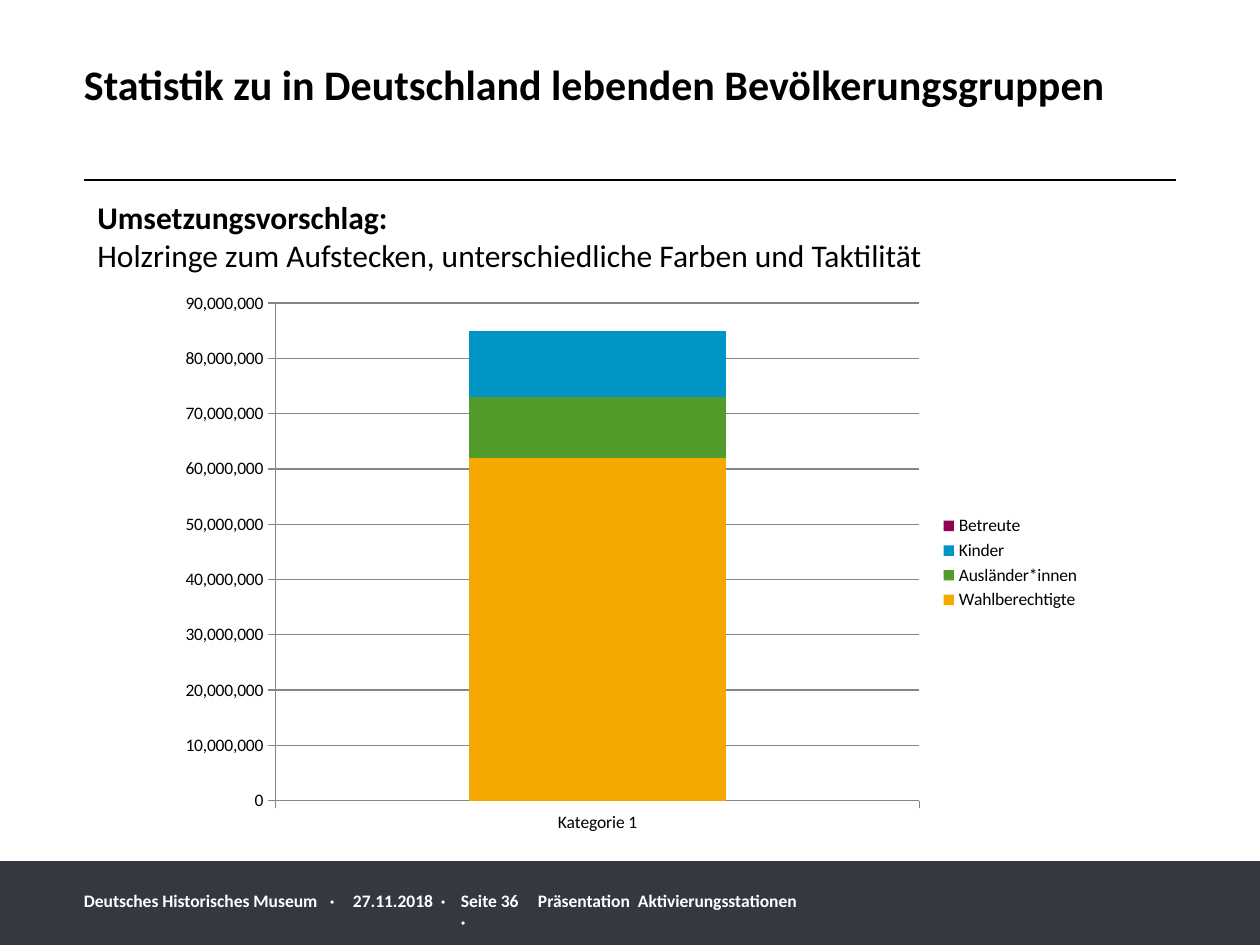
from dataclasses import dataclass

from lxml import etree
from pptx import Presentation
from pptx import util as u
from pptx.chart.data import CategoryChartData
from pptx.dml.color import RGBColor
from pptx.enum import chart as ch
from pptx.enum import shapes, text
from pptx.oxml.ns import qn


@dataclass(frozen=True)
class Theme:
    font: str = "Calibri"
    ink: str = "000000"
    paper: str = "FFFFFF"
    band: str = "343840"
    grid: str = "868686"
    title_size: int = 24
    body_size: int = 18
    small_size: int = 10


THEME = Theme()
PX_PER_INCH = 126
LEFT, RIGHT = 84, 1176
FOOTER_TOP, FOOTER_TEXT_TOP = 861, 890

# left, width, text, tab stop within the box
FOOTER = [
    (LEFT, 263, "Deutsches Historisches Museum\t·", 246),
    (353, 100, "27.11.2018\t·", 88),
    (461, 72, "Seite 36\v·", None),
    (538, 399, "Präsentation\tAktivierungsstationen", 100),
]
CATEGORIES = ["Kategorie 1"]
GROUPS = [
    ("Wahlberechtigte", 62_000_000, "F4A800"),
    ("Ausländer*innen", 11_000_000, "539B2A"),
    ("Kinder", 12_000_000, "0095C4"),
    ("Betreute", 0, "8F0256"),
]


def px(length):
    return u.Emu(round(length * 914400 / PX_PER_INCH))


def rgb(code):
    return RGBColor.from_string(code)


def style_font(font, size, color=THEME.ink, bold=False):
    font.name = THEME.font
    font.size = u.Pt(size)
    font.bold = bold
    font.color.rgb = rgb(color)


def add_tab_stop(para, position):
    stops = etree.SubElement(para._p.get_or_add_pPr(), qn("a:tabLst"))
    etree.SubElement(stops, qn("a:tab"), pos=str(px(position)), algn="l")


def add_text(page, area, lines, size, color=THEME.ink, inset=True, tab=None):
    """Add a text box; lines holds (wording, bold) pairs, one per paragraph."""
    box = page.shapes.add_textbox(*map(px, area))
    frame = box.text_frame
    frame.word_wrap = True
    frame.vertical_anchor = text.MSO_ANCHOR.TOP
    if not inset:
        frame.margin_left = frame.margin_right = 0
        frame.margin_top = frame.margin_bottom = 0
    frame.text = "\n".join(wording for wording, _ in lines)
    for para, (_, bold) in zip(frame.paragraphs, lines):
        if tab:
            add_tab_stop(para, tab)
        for span in para.runs:
            style_font(span.font, size, color, bold)
    return box


def add_rule(page, y):
    rule = page.shapes.add_connector(
        shapes.MSO_CONNECTOR.STRAIGHT, px(LEFT), px(y), px(RIGHT), px(y))
    rule.line.color.rgb = rgb(THEME.ink)
    rule.line.width = u.Pt(0.75)
    etree.SubElement(rule._element.spPr, qn("a:effectLst"))


def add_footer(page):
    band = page.shapes.add_shape(
        shapes.MSO_SHAPE.RECTANGLE, 0, px(FOOTER_TOP), px(1260), px(945 - FOOTER_TOP))
    band.shadow.inherit = False
    band.fill.solid()
    band.fill.fore_color.rgb = rgb(THEME.band)
    band.line.fill.background()
    for left, width, wording, tab in FOOTER:
        add_text(page, (left, FOOTER_TEXT_TOP, width, 25), [(wording, True)],
                 THEME.small_size, THEME.paper, inset=False, tab=tab)


def style_line(line):
    line.color.rgb = rgb(THEME.grid)
    line.width = u.Pt(0.75)


def add_population_chart(page, area):
    data = CategoryChartData(number_format="#,##0")
    data.categories = CATEGORIES
    for name, count, _ in GROUPS:
        data.add_series(name, [count])
    chart = page.shapes.add_chart(
        ch.XL_CHART_TYPE.COLUMN_STACKED, *map(px, area), data).chart
    style_font(chart.font, THEME.small_size)
    chart.has_title = False
    chart.has_legend = True
    chart.legend.position = ch.XL_LEGEND_POSITION.RIGHT
    chart.legend.include_in_layout = False

    plot = chart.plots[0]
    plot.gap_width, plot.overlap = 150, 100
    plot.vary_by_categories = False
    for series, (_, _, color) in zip(plot.series, GROUPS):
        series.format.fill.solid()
        series.format.fill.fore_color.rgb = rgb(color)

    for axis in (chart.category_axis, chart.value_axis):
        axis.major_tick_mark = ch.XL_TICK_MARK.OUTSIDE
        axis.minor_tick_mark = ch.XL_TICK_MARK.NONE
        style_line(axis.format.line)
    values = chart.value_axis
    values.minimum_scale, values.maximum_scale = 0, 90_000_000
    values.major_unit = 10_000_000
    values.tick_labels.number_format = "#,##0"
    values.tick_labels.number_format_is_linked = False
    values.has_major_gridlines = True
    style_line(values.major_gridlines.format.line)


def main():
    deck = Presentation()
    deck.slide_width, deck.slide_height = px(1260), px(945)
    page = deck.slides.add_slide(deck.slide_layouts[6])

    add_footer(page)
    add_rule(page, 180)
    title = add_text(
        page, (LEFT, 56, RIGHT - LEFT, 100),
        [("Statistik zu in Deutschland lebenden Bevölkerungsgruppen", True)],
        THEME.title_size, inset=False)
    title.text_frame.paragraphs[0].line_spacing = u.Pt(30)
    add_population_chart(page, (167, 282, 926, 562))
    add_text(
        page, (85, 192, 1085, 89),
        [("Umsetzungsvorschlag:", True),
         ("Holzringe zum Aufstecken, unterschiedliche Farben und Taktilität", False)],
        THEME.body_size)

    deck.save("out.pptx")


if __name__ == "__main__":
    main()
